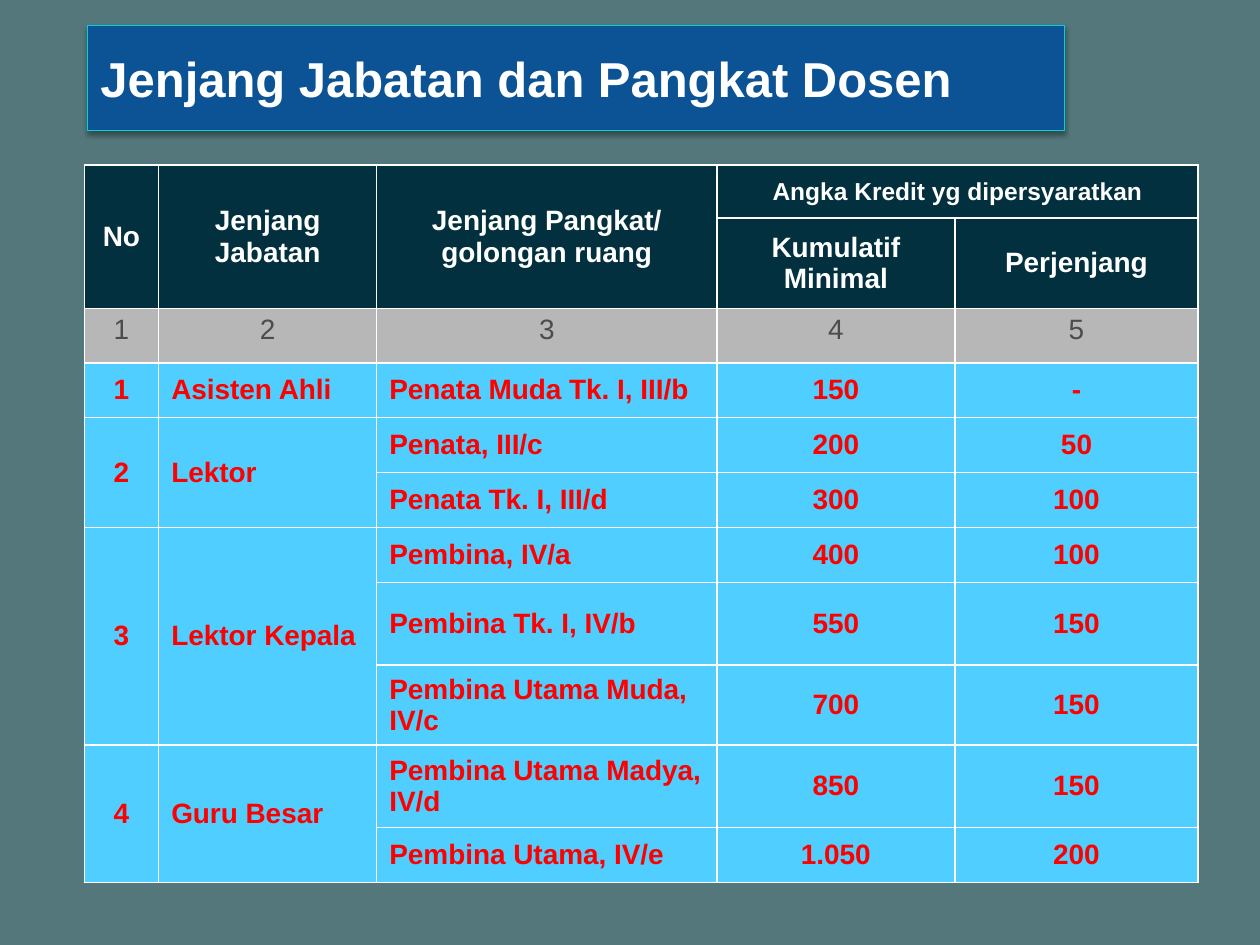
from lxml.etree import SubElement
from pptx import Presentation
from pptx.dml.color import RGBColor
from pptx.enum.text import MSO_ANCHOR, MSO_AUTO_SIZE, PP_ALIGN
from pptx.oxml.ns import qn
from pptx.util import Pt

FONT = "Arial"
COLORS = {
    "background": "53777A",
    "title": "0B5394",
    "title_line": "06D0D9",
    "shadow": "000000",
    "white": "FFFFFF",
    "header": "02303E",
    "number": "B7B7B7",
    "number_text": "4C4C4C",
    "body": "4FCEFF",
    "body_text": "FF0000",
}
COL_WIDTHS = [42.5, 124.6, 194.4, 136, 139]
ROW_HEIGHTS = [30.3, 51.6, 31.2, 31.2, 31.5, 31.2, 31.5, 47.3, 45.6, 47.3, 31.2]
HEADER = [
    ["No", "Jenjang Jabatan", "Jenjang Pangkat/\ngolongan ruang",
     "Angka Kredit yg dipersyaratkan", None],
    [None, None, None, "Kumulatif Minimal", "Perjenjang"],
]
NUMBERS = ["1", "2", "3", "4", "5"]
POSITIONS = [
    ("Asisten Ahli", [("Penata Muda Tk. I, III/b", "150", "-")]),
    ("Lektor", [("Penata, III/c", "200", "50"),
                ("Penata Tk. I, III/d", "300", "100")]),
    ("Lektor Kepala", [("Pembina, IV/a", "400", "100"),
                       ("Pembina Tk. I, IV/b", "550", "150"),
                       ("Pembina Utama Muda, IV/c", "700", "150")]),
    ("Guru Besar", [("Pembina Utama Madya, IV/d", "850", "150"),
                    ("Pembina Utama, IV/e", "1.050", "200")]),
]


def rgb(name):
    return RGBColor.from_string(COLORS[name])


def format_text(tf, size, color, bold, align):
    for p in tf.paragraphs:
        p.alignment = align
        for r in p.runs:
            r.font.name = FONT
            r.font.size = Pt(size)
            r.font.bold = bold
            r.font.color.rgb = rgb(color)


def add_shadow(sp):
    effects = SubElement(sp._element.spPr, qn("a:effectLst"))
    shadow = SubElement(effects, qn("a:outerShdw"), blurRad=str(Pt(3.1)),
                        dist=str(Pt(1.8)), dir="5400000", rotWithShape="0")
    color = SubElement(shadow, qn("a:srgbClr"), val=COLORS["shadow"])
    SubElement(color, qn("a:alpha"), val="35000")


def add_title(s, text):
    sp = s.shapes.title
    sp.left, sp.top, sp.width, sp.height = Pt(50.2), Pt(24), Pt(558), Pt(41)
    sp.fill.solid()
    sp.fill.fore_color.rgb = rgb("title")
    sp.line.color.rgb = rgb("title_line")
    sp.line.width = Pt(0.75)
    add_shadow(sp)
    tf = sp.text_frame
    tf.text = text
    tf.word_wrap = True
    tf.auto_size = MSO_AUTO_SIZE.SHAPE_TO_FIT_TEXT
    tf.vertical_anchor = MSO_ANCHOR.MIDDLE
    format_text(tf, 28, "white", True, PP_ALIGN.LEFT)


def add_borders(cell):
    tcPr = cell._tc.get_or_add_tcPr()
    for side in ("lnL", "lnR", "lnT", "lnB"):
        ln = SubElement(tcPr, qn(f"a:{side}"), w=str(Pt(1)))
        fill = SubElement(ln, qn("a:solidFill"))
        SubElement(fill, qn("a:srgbClr"), val=COLORS["white"])


def fill_row(table, row, texts, kind, color, bold=True,
             anchor=MSO_ANCHOR.MIDDLE, left_cols=()):
    for col, text in enumerate(texts):
        cell = table.cell(row, col)
        add_borders(cell)
        cell.fill.solid()
        cell.fill.fore_color.rgb = rgb(kind)
        cell.vertical_anchor = anchor
        if text is not None:
            cell.text_frame.text = text
            align = PP_ALIGN.LEFT if col in left_cols else PP_ALIGN.CENTER
            format_text(cell.text_frame, 16, color, bold, align)


def merge_down(table, row, col, count):
    if count > 1:
        table.cell(row, col).merge(table.cell(row + count - 1, col))


def add_rank_table(s):
    frame = s.shapes.add_table(len(ROW_HEIGHTS), len(COL_WIDTHS), Pt(48.2), Pt(94.4),
                               Pt(sum(COL_WIDTHS)), Pt(sum(ROW_HEIGHTS)))
    table = frame.table
    for column, width in zip(table.columns, COL_WIDTHS):
        column.width = Pt(width)
    for table_row, height in zip(table.rows, ROW_HEIGHTS):
        table_row.height = Pt(height)

    for row, texts in enumerate(HEADER):
        fill_row(table, row, texts, "header", "white")
    for col in range(3):
        merge_down(table, 0, col, 2)
    credit = table.cell(0, 3)
    credit.merge(table.cell(0, 4))
    format_text(credit.text_frame, 14, "white", True, PP_ALIGN.CENTER)

    fill_row(table, 2, NUMBERS, "number", "number_text", False, MSO_ANCHOR.TOP)

    row = 3
    for number, (position, ranks) in enumerate(POSITIONS, 1):
        for i, rank in enumerate(ranks):
            labels = (None, None) if i else (str(number), position)
            fill_row(table, row + i, labels + rank, "body", "body_text", left_cols=(1, 2))
        for col in range(2):
            merge_down(table, row, col, len(ranks))
        row += len(ranks)


def main():
    prs = Presentation()
    prs.slide_width, prs.slide_height = Pt(720), Pt(540)
    s = prs.slides.add_slide(prs.slide_layouts[5])
    s.background.fill.solid()
    s.background.fill.fore_color.rgb = rgb("background")
    add_title(s, "Jenjang Jabatan dan Pangkat Dosen")
    add_rank_table(s)
    prs.save("out.pptx")


if __name__ == "__main__":
    main()
